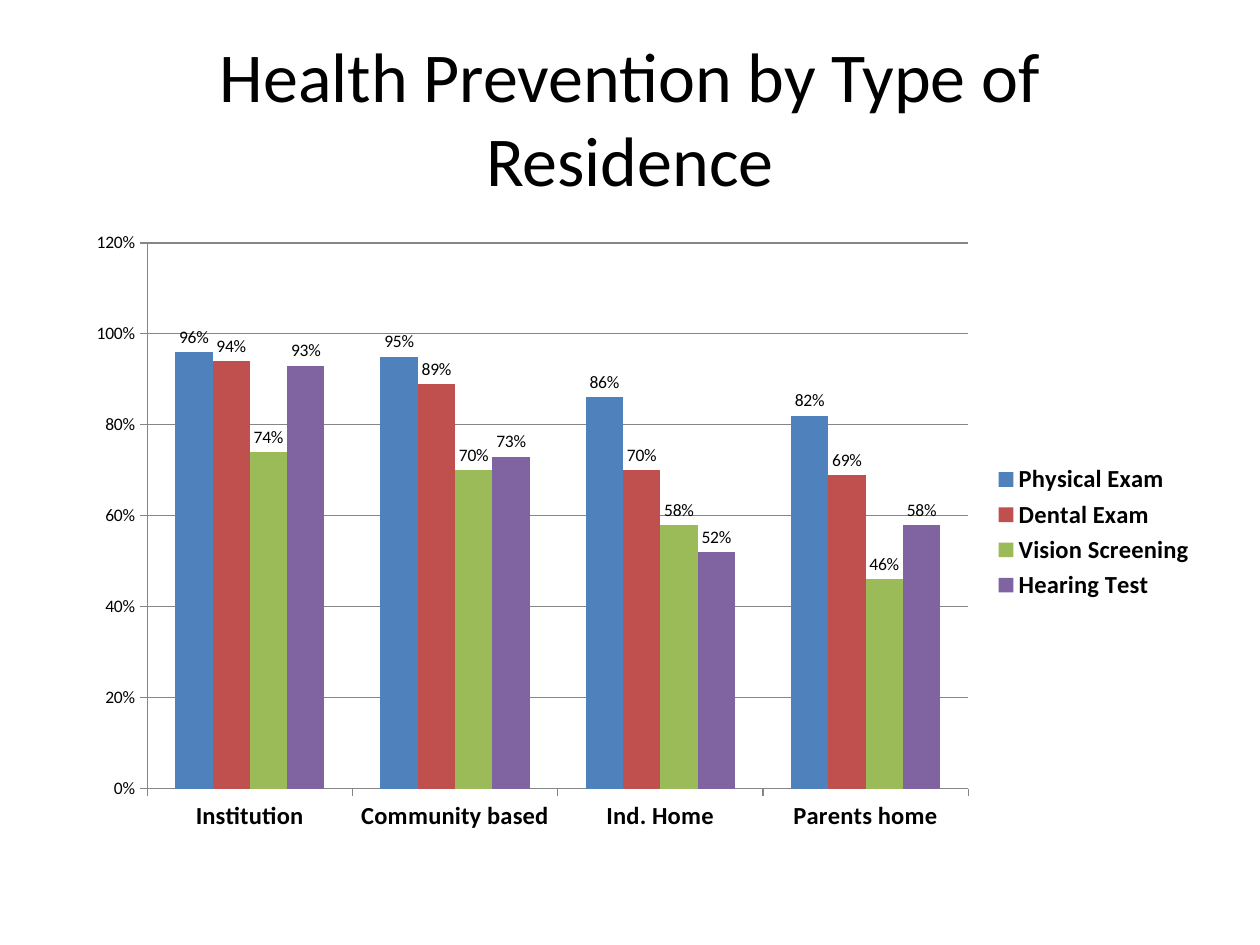
import pptx
import pptx.chart.data
import pptx.dml.color
import pptx.enum.chart
import pptx.enum.text
import pptx.oxml
import pptx.oxml.ns
import pptx.util

Pt = pptx.util.Pt
FONT = "Calibri"
COLORS = {
    "text": "000000",
    "grid": "868686",
    "Physical Exam": "4F81BD",
    "Dental Exam": "C0504D",
    "Vision Screening": "9BBB59",
    "Hearing Test": "8064A2",
}
RESIDENCES = ["Institution", "Community based", "Ind. Home", "Parents home"]
RATES = {
    "Physical Exam": [0.96, 0.95, 0.86, 0.82],
    "Dental Exam": [0.94, 0.89, 0.70, 0.69],
    "Vision Screening": [0.74, 0.70, 0.58, 0.46],
    "Hearing Test": [0.93, 0.73, 0.52, 0.58],
}


def rgb(name):
    return pptx.dml.color.RGBColor.from_string(COLORS[name])


def set_font(font, size, bold=False):
    font.name = FONT
    font.size = Pt(size)
    font.bold = bold
    font.color.rgb = rgb("text")


def add_text(s, text, left, top, width, height, size, bold=False,
             align=pptx.enum.text.PP_ALIGN.CENTER):
    tf = s.shapes.add_textbox(Pt(left), Pt(top), Pt(width), Pt(height)).text_frame
    tf.word_wrap = True
    tf.vertical_anchor = pptx.enum.text.MSO_ANCHOR.MIDDLE
    p = tf.paragraphs[0]
    p.alignment = align
    r = p.add_run()
    r.text = text
    set_font(r.font, size, bold)


def place_plot(chart, **fractions):
    """Fix the inner plot area as fractions (x, y, w, h) of the chart."""
    area = chart._chartSpace.chart.plotArea
    for old in area.findall(pptx.oxml.ns.qn("c:layout")):
        area.remove(old)
    sizes = "".join(f'<c:{k} val="{v}"/>' for k, v in fractions.items())
    area.insert(0, pptx.oxml.parse_xml(
        f'<c:layout {pptx.oxml.ns.nsdecls("c")}><c:manualLayout>'
        '<c:layoutTarget val="inner"/><c:xMode val="edge"/><c:yMode val="edge"/>'
        f'{sizes}</c:manualLayout></c:layout>'))


def format_axis(axis, size, bold=False):
    axis.major_tick_mark = pptx.enum.chart.XL_TICK_MARK.OUTSIDE
    axis.minor_tick_mark = pptx.enum.chart.XL_TICK_MARK.NONE
    axis.format.line.color.rgb = rgb("grid")
    axis.format.line.width = Pt(0.75)
    set_font(axis.tick_labels.font, size, bold)


def add_column_chart(s, left, top, width, height):
    data = pptx.chart.data.CategoryChartData(number_format="0%")
    data.categories = RESIDENCES
    for name, values in RATES.items():
        data.add_series(name, values)
    chart = s.shapes.add_chart(
        pptx.enum.chart.XL_CHART_TYPE.COLUMN_CLUSTERED,
        Pt(left), Pt(top), Pt(width), Pt(height), data).chart
    chart.has_title = False
    set_font(chart.font, 10)
    place_plot(chart, x=0.065, y=0.036, w=0.724, h=0.875)

    # Axes and gridlines
    format_axis(chart.category_axis, 14, bold=True)
    axis = chart.value_axis
    format_axis(axis, 10)
    axis.minimum_scale, axis.maximum_scale, axis.major_unit = 0, 1.2, 0.2
    axis.tick_labels.number_format = "0%"
    axis.tick_labels.number_format_is_linked = False
    axis.has_major_gridlines = True
    axis.major_gridlines.format.line.color.rgb = rgb("grid")
    axis.major_gridlines.format.line.width = Pt(0.75)

    # Columns and their labels
    plot = chart.plots[0]
    plot.gap_width = 150
    plot.overlap = 0
    plot.vary_by_categories = False
    for series in plot.series:
        series.format.fill.solid()
        series.format.fill.fore_color.rgb = rgb(series.name)
        labels = series.data_labels
        labels.show_value = True
        labels.number_format = "0%"
        labels.number_format_is_linked = False
        labels.position = pptx.enum.chart.XL_LABEL_POSITION.OUTSIDE_END
        set_font(labels.font, 10)

    # Legend
    chart.has_legend = True
    chart.legend.position = pptx.enum.chart.XL_LEGEND_POSITION.RIGHT
    chart.legend.include_in_layout = False
    set_font(chart.legend.font, 14, bold=True)


def main():
    prs = pptx.Presentation()
    prs.slide_width, prs.slide_height = Pt(720), Pt(540)
    s = prs.slides.add_slide(prs.slide_layouts[6])
    add_text(s, "Health Prevention by Type of Residence", 36, 21.6, 648, 90, size=40)
    add_column_chart(s, 42, 126, 648, 356.4)
    prs.save("out.pptx")


if __name__ == "__main__":
    main()
